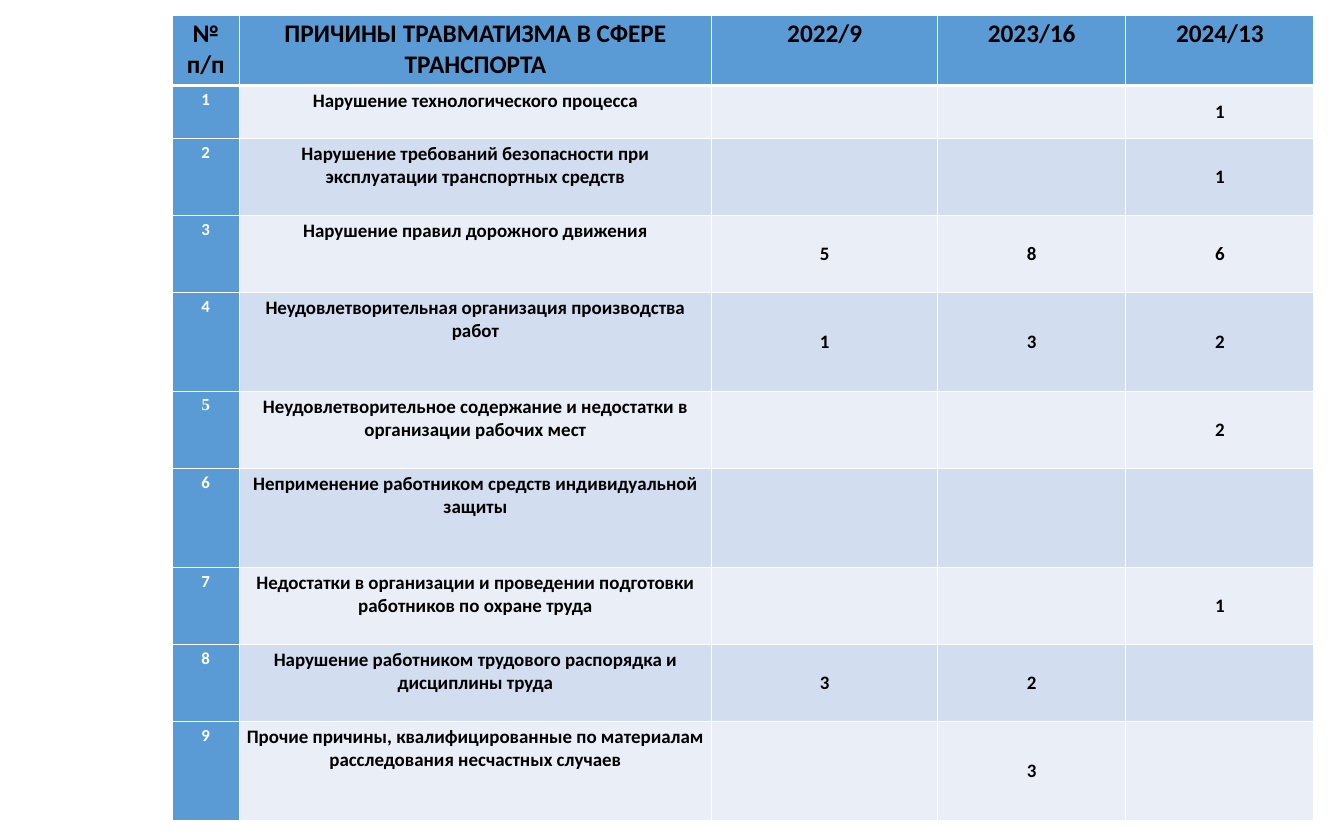
from lxml.etree import SubElement
from pptx import Presentation
from pptx.dml.color import RGBColor
from pptx.enum.text import MSO_ANCHOR, PP_ALIGN
from pptx.oxml.ns import qn
from pptx.util import Pt

COLORS = {
    "header": "5B9BD5",
    "light": "EAEFF7",
    "dark": "D2DEEF",
    "white": "FFFFFF",
    "black": "000000",
}
COLUMN_WIDTHS = [63.4, 448.6, 214.6, 178.6, 178.6]
ROW_HEIGHTS = [67, 50.4, 72.8, 72.8, 94.4, 72.8, 94.4, 72.8, 72.8, 94.4]

HEADINGS = ["№ п/п", "ПРИЧИНЫ ТРАВМАТИЗМА В СФЕРЕ ТРАНСПОРТА",
            "2022/9", "2023/16", "2024/13"]
CAUSES = [
    ("Нарушение технологического процесса", "", "", "1"),
    ("Нарушение требований безопасности при эксплуатации транспортных средств", "", "", "1"),
    ("Нарушение правил дорожного движения", "5", "8", "6"),
    ("Неудовлетворительная организация производства работ", "1", "3", "2"),
    ("Неудовлетворительное содержание и недостатки в организации рабочих мест", "", "", "2"),
    ("Неприменение работником средств индивидуальной защиты", "", "", ""),
    ("Недостатки в организации и проведении подготовки работников по охране труда", "", "", "1"),
    ("Нарушение работником трудового распорядка и дисциплины труда", "3", "2", ""),
    ("Прочие причины, квалифицированные по материалам расследования несчастных случаев",
     "", "3", ""),
]


def write_cell(cell, text, size=18, color="black", font="Calibri", anchor=MSO_ANCHOR.TOP):
    cell.margin_left = cell.margin_right = Pt(5)
    cell.margin_top = cell.margin_bottom = Pt(3.6)
    cell.vertical_anchor = anchor
    para = cell.text_frame.paragraphs[0]
    para.alignment = PP_ALIGN.CENTER
    if text:
        span = para.add_run()
        span.text = text
        span.font.name = font
        span.font.size = Pt(size)
        span.font.bold = True
        span.font.color.rgb = RGBColor.from_string(COLORS[color])


def style_cell(cell, fill, top, bottom):
    # Borders come before the fill in the cell properties
    properties = cell._tc.get_or_add_tcPr()
    for side, width in (("L", 0.96), ("R", 0.96), ("T", top), ("B", bottom)):
        line = SubElement(properties, qn("a:ln" + side), w=str(Pt(width)))
        solid = SubElement(line, qn("a:solidFill"))
        SubElement(solid, qn("a:srgbClr"), val=COLORS["white"])
    cell.fill.solid()
    cell.fill.fore_color.rgb = RGBColor.from_string(COLORS[fill])


# Page
deck = Presentation()
deck.slide_width, deck.slide_height = Pt(1275.84), Pt(796.32)
page = deck.slides.add_slide(deck.slide_layouts[6])

# Table grid
table = page.shapes.add_table(
    len(ROW_HEIGHTS), len(COLUMN_WIDTHS), Pt(163.6), Pt(14.4),
    Pt(sum(COLUMN_WIDTHS)), Pt(sum(ROW_HEIGHTS))).table
for column, width in zip(table.columns, COLUMN_WIDTHS):
    column.width = Pt(width)
for row, height in zip(table.rows, ROW_HEIGHTS):
    row.height = Pt(height)

# Heading row
for index, heading in enumerate(HEADINGS):
    cell = table.cell(0, index)
    write_cell(cell, heading, size=24)
    style_cell(cell, "header", top=0.96, bottom=3)

# Numbered causes with the count for each year
for number, (cause, *counts) in enumerate(CAUSES, start=1):
    number_font = "Times New Roman" if number == 5 else "Calibri"
    write_cell(table.cell(number, 0), str(number), size=16, color="white", font=number_font)
    write_cell(table.cell(number, 1), cause)
    for index, count in enumerate(counts, start=2):
        write_cell(table.cell(number, index), count, anchor=MSO_ANCHOR.MIDDLE)

    band = "light" if number % 2 else "dark"
    for index in range(len(COLUMN_WIDTHS)):
        style_cell(table.cell(number, index), band if index else "header",
                   top=3 if number == 1 else 0.96, bottom=0.96)

deck.save("out.pptx")
